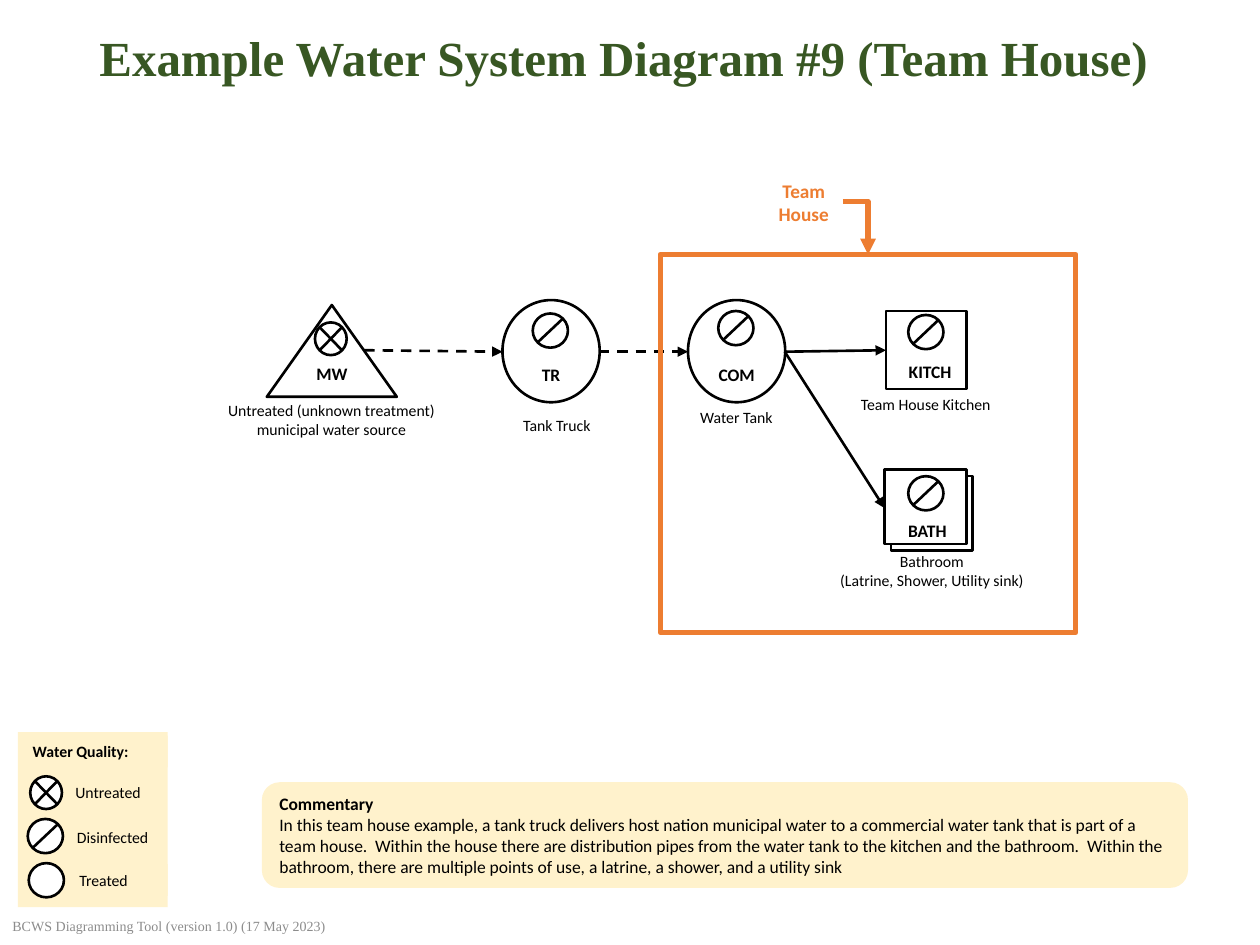
"""Build the team house water system diagram slide."""
import pptx
import pptx.dml.color
import pptx.enum.dml
import pptx.enum.shapes
import pptx.enum.text
import pptx.oxml.ns
import pptx.util
from lxml import etree
from pptx.util import Cm

RGB = pptx.dml.color.RGBColor
BLACK = RGB(0x00, 0x00, 0x00)
WHITE = RGB(0xFF, 0xFF, 0xFF)
GREEN = RGB(0x38, 0x57, 0x23)
GREY = RGB(0x8C, 0x8C, 0x8C)
CREAM = RGB(0xFF, 0xF2, 0xCC)
ORANGE = RGB(0xED, 0x7D, 0x31)

SHAPE = pptx.enum.shapes.MSO_SHAPE
CONNECTOR = pptx.enum.shapes.MSO_CONNECTOR
ALIGN = pptx.enum.text.PP_ALIGN
ANCHOR = pptx.enum.text.MSO_ANCHOR
qn = pptx.oxml.ns.qn


class WaterDiagram:
    sans = "Calibri"
    serif = "Times New Roman"
    outline = 1.5

    def __init__(self, slide):
        self.slide = slide

    def add_runs(self, frame, paragraphs, size, color=BLACK, align=ALIGN.LEFT,
                 anchor=ANCHOR.MIDDLE, font=None, wrap=True):
        frame.word_wrap = wrap
        frame.vertical_anchor = anchor
        for index, (text, bold) in enumerate(paragraphs):
            paragraph = frame.add_paragraph() if index else frame.paragraphs[0]
            paragraph.alignment = align
            run = paragraph.add_run()
            run.text = text
            run.font.name = font or self.sans
            run.font.size = pptx.util.Pt(size)
            run.font.bold = bold
            run.font.color.rgb = color

    def title(self, text, box):
        heading = self.slide.shapes.title
        heading.left, heading.top, heading.width, heading.height = map(Cm, box)
        frame = heading.text_frame
        frame.auto_size = pptx.enum.text.MSO_AUTO_SIZE.NONE
        self.add_runs(frame, [(text, True)], 28, GREEN, font=self.serif)
        frame.paragraphs[0].line_spacing = 0.9

    def text(self, paragraphs, box, size, **style):
        label = self.slide.shapes.add_textbox(*map(Cm, box))
        self.add_runs(label.text_frame, paragraphs, size, **style)

    def caption(self, lines, box):
        self.text([(line, False) for line in lines], box, 9,
                  align=ALIGN.CENTER, wrap=False)

    def shape(self, kind, box, fill=WHITE, line=BLACK, width=outline):
        part = self.slide.shapes.add_shape(kind, *map(Cm, box))
        part.shadow.inherit = False
        if fill is None:
            part.fill.background()
        else:
            part.fill.solid()
            part.fill.fore_color.rgb = fill
        if line is None:
            part.line.fill.background()
        else:
            part.line.color.rgb = line
            part.line.width = pptx.util.Pt(width)
        return part

    def node(self, kind, box, code, bottom=0, left=0, anchor=ANCHOR.BOTTOM):
        frame = self.shape(kind, box).text_frame
        frame.margin_left, frame.margin_bottom = Cm(left), Cm(bottom)
        frame.margin_right = frame.margin_top = 0
        self.add_runs(frame, [(code, True)], 10, align=ALIGN.CENTER, anchor=anchor)

    def panel(self, kind, box, paragraphs, size):
        frame = self.shape(kind, box, CREAM, None).text_frame
        self.add_runs(frame, paragraphs, size)
        return frame

    def line(self, start, end, color=BLACK, width=outline, dashed=False,
             arrow=True, bent=False):
        kind = CONNECTOR.ELBOW if bent else CONNECTOR.STRAIGHT
        pipe = self.slide.shapes.add_connector(kind, *map(Cm, start + end))
        pipe.line.color.rgb = color
        pipe.line.width = pptx.util.Pt(width)
        if dashed:
            pipe.line.dash_style = pptx.enum.dml.MSO_LINE.DASH
        properties = pipe.element.spPr
        if bent:
            properties.find(qn("a:prstGeom")).set("prst", "bentConnector2")
        if arrow:
            etree.SubElement(properties.find(qn("a:ln")), qn("a:tailEnd"),
                             type="triangle")
        etree.SubElement(properties, qn("a:effectLst"))

    def untreated(self, x, y):
        self.shape(SHAPE.FLOWCHART_SUMMING_JUNCTION, (x, y, 0.64, 0.66))

    def treated(self, x, y):
        self.shape(SHAPE.FLOWCHART_CONNECTOR, (x, y, 0.71, 0.69))

    def disinfected(self, x, y):
        self.treated(x, y)
        self.line((x + 0.1, y + 0.58), (x + 0.61, y + 0.1), arrow=False)


def main():
    deck = pptx.Presentation()
    deck.slide_width, deck.slide_height = Cm(25.4), Cm(19.05)
    diagram = WaterDiagram(deck.slides.add_slide(deck.slide_layouts[5]))

    diagram.title("Example Water System Diagram #9 (Team House)",
                  (1.75, 0.28, 21.9, 1.88))
    diagram.text([("BCWS Diagramming Tool (version 1.0) (17 May 2023)", False)],
                 (0, 18.29, 15.24, 0.74), 8, color=GREY, font=diagram.serif)
    commentary = (
        "In this team house example, a tank truck delivers host nation "
        "municipal water to a commercial water tank that is part of a team "
        "house.  Within the house there are distribution pipes from the water "
        "tank to the kitchen and the bathroom.  Within the bathroom, there are "
        "multiple points of use, a latrine, a shower, and a utility sink")
    diagram.panel(SHAPE.ROUNDED_RECTANGLE, (5.28, 15.77, 18.67, 2.13),
                  [("Commentary", True), (commentary, False)], 10)

    diagram.node(SHAPE.ISOSCELES_TRIANGLE, (5.38, 6.15, 2.62, 1.85), "MW",
                 anchor=ANCHOR.MIDDLE)
    diagram.untreated(6.35, 6.5)
    for x, code in ((10.13, "TR"), (13.87, "COM")):
        diagram.node(SHAPE.FLOWCHART_CONNECTOR, (x, 6.05, 1.96, 2.06), code, 0.05)
    diagram.shape(SHAPE.RECTANGLE, (17.96, 9.6, 1.65, 1.5))
    diagram.node(SHAPE.RECTANGLE, (17.83, 9.47, 1.65, 1.5), "BATH", 0.07, 0.08)
    diagram.node(SHAPE.RECTANGLE, (17.86, 6.27, 1.63, 1.57), "KITCH", 0.14, 0.15)
    for x, y in ((10.74, 6.32), (14.48, 6.27), (18.31, 6.35), (18.31, 9.6)):
        diagram.disinfected(x, y)

    for lines, box in (
        (("Untreated (unknown treatment)", "municipal water source"),
         (4.24, 7.95, 4.88, 1.02)),
        (("Tank Truck",), (10.26, 8.26, 1.93, 0.64)),
        (("Water Tank",), (13.46, 8.1, 2.77, 0.64)),
        (("Team House Kitchen",), (17.07, 7.82, 3.18, 0.64)),
        (("Bathroom", "(Latrine, Shower, Utility sink)"),
         (16.64, 11, 4.29, 1.02)),
    ):
        diagram.caption(lines, box)

    tank_outlet = (15.82, 7.09)
    diagram.line((7.34, 7.06), (10.13, 7.09), dashed=True)
    diagram.line((12.07, 7.09), (13.87, 7.09), dashed=True)
    diagram.line(tank_outlet, (17.86, 7.06))
    diagram.line(tank_outlet, (17.83, 10.24))

    diagram.shape(SHAPE.RECTANGLE, (13.31, 5.13, 8.38, 7.62), None, ORANGE, 3)
    diagram.text([("Team House", True)], (15.39, 3.48, 1.63, 1.19), 11,
                 color=ORANGE, align=ALIGN.CENTER, anchor=ANCHOR.TOP)
    diagram.line((16.99, 4.06), (17.5, 5.13), ORANGE, 3, bent=True)

    diagram.shape(SHAPE.RECTANGLE, (0.36, 14.76, 3.02, 3.53), CREAM, None)
    for text, bold, x, y, width in (
        ("Water Quality:", True, 0.41, 14.83, 2.97),
        ("Untreated", False, 1.27, 15.65, 2.01),
        ("Disinfected", False, 1.3, 16.56, 1.98),
        ("Treated", False, 1.35, 17.42, 2.03),
    ):
        entry = diagram.panel(SHAPE.RECTANGLE, (x, y, width, 0.64),
                              [(text, bold)], 9)
        entry.margin_right = 0
    diagram.untreated(0.61, 15.65)
    diagram.disinfected(0.56, 16.51)
    diagram.treated(0.58, 17.4)

    deck.save("out.pptx")


if __name__ == "__main__":
    main()
